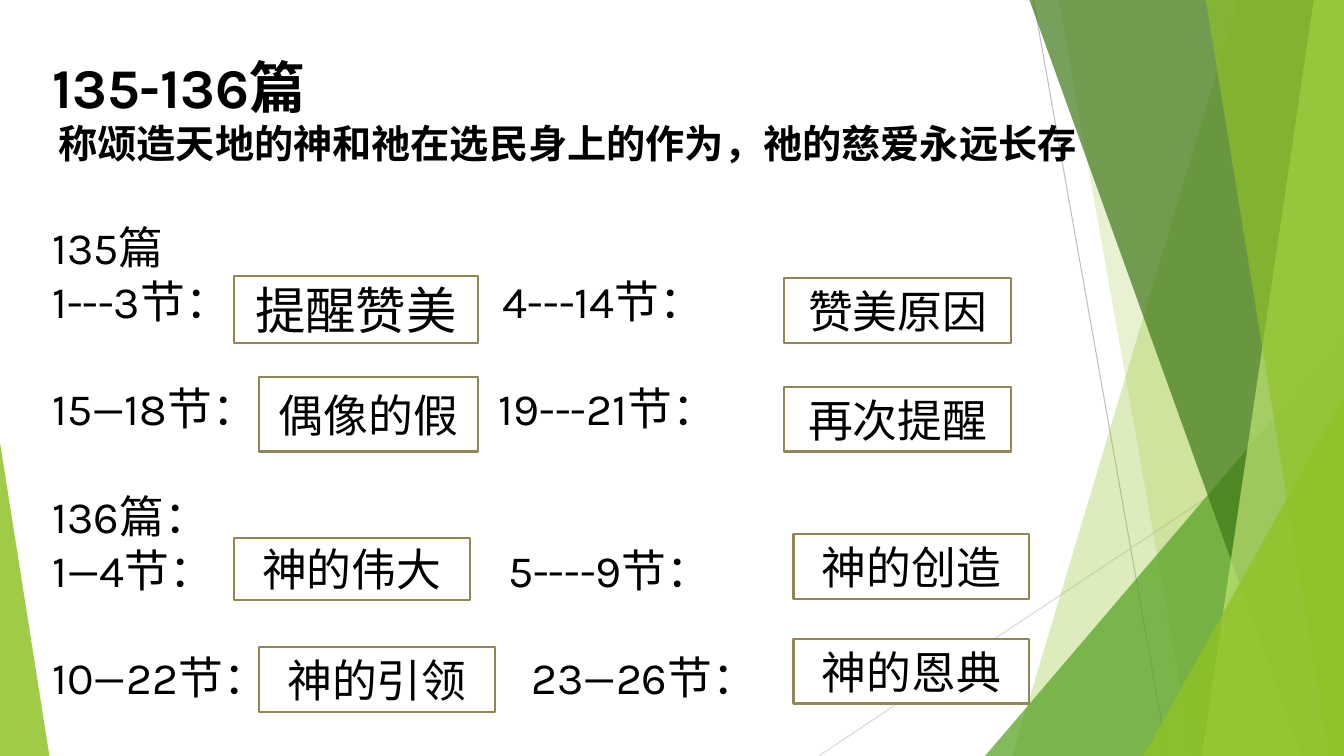
import pptx
import pptx.dml.color
import pptx.enum.lang
import pptx.enum.shapes
import pptx.enum.text
import pptx.oxml
import pptx.oxml.ns
import pptx.util
from pptx.util import Inches, Pt

# Content
FONT = "Karla"
HEADING = "135-136篇"
SUBHEADING = "称颂造天地的神和祂在选民身上的作为，祂的慈爱永远长存"
# text, tab stop of the second column (inches), one line of space before
VERSES = [
    ("135篇", None, False),
    ("1---3节：\t4---14节：", 4.47, False),
    ("15—18节：\t19---21节：", 4.43, True),
    ("136篇：", None, True),
    ("1—4节：\t5----9节：", 4.52, False),
    ("10—22节：\t23—26节：", 4.75, True),
]
# text, left, top, width, height, size
ANSWERS = [
    ("提醒赞美", 2.32, 2.74, 2.42, 0.66, 36),
    ("赞美原因", 7.78, 2.76, 2.25, 0.64, 32),
    ("再次提醒", 7.78, 3.84, 2.25, 0.64, 32),
    ("偶像的假", 2.57, 3.74, 2.17, 0.74, 32),
    ("神的伟大", 2.32, 5.34, 2.34, 0.61, 32),
    ("神的创造", 7.87, 5.3, 2.34, 0.64, 32),
    ("神的引领", 2.57, 6.42, 2.34, 0.64, 32),
    ("神的恩典", 7.87, 6.34, 2.34, 0.64, 32),
]

# Background decoration, from back to front
WIDTH, HEIGHT = 13.33, 7.5
THIN_LINES = [
    (10.25, 0, 11.58, HEIGHT, "BFBFBF"),
    (WIDTH, 4.03, 8.12, HEIGHT, "D9D9D9"),
]
# band: left edge at the top and at the bottom; triangle: left, width, height, apex
FACETS = [
    ("band", (12.28, 10.04), "90C226", 30),
    ("band", (10.5, 11.83), "90C226", 20),
    ("triangle", (9.77, 3.56, 4.17, 1), "54A021", 72),
    ("band", (10.21, 12.91), "3F7819", 70),
    ("band", (13.03, 11.92), "C0E474", 70),
    ("band", (11.96, 13.18), "90C226", 65),
    ("triangle", (11.34, 1.99, 3.57, 1), "90C226", 80),
    ("triangle", (0, 0.49, 3.11, 0), "90C226", 85),
]


def color(value):
    return pptx.dml.color.RGBColor.from_string(value)


def add_child(parent, tag, **attributes):
    child = pptx.oxml.parse_xml(f"<{tag} {pptx.oxml.ns.nsdecls('a')}/>")
    for name, value in attributes.items():
        child.set(name, str(value))
    parent.append(child)
    return child


def write(frame, text, size=32, bold=False, align="LEFT", before=0, indent=0, tab=None):
    """Fill the empty first paragraph, or add a new one."""
    paragraph = frame.paragraphs[0]
    if paragraph.runs:
        paragraph = frame.add_paragraph()
    paragraph.alignment = getattr(pptx.enum.text.PP_ALIGN, align)
    paragraph.line_spacing = 1.0
    paragraph.space_before = Pt(before)
    properties = paragraph._p.get_or_add_pPr()
    if indent:
        properties.set("marL", str(Inches(indent)))
        properties.set("indent", "0")
    if tab:
        stops = add_child(properties, "a:tabLst")
        add_child(stops, "a:tab", pos=Inches(tab), algn="l")
    run = paragraph.add_run()
    run.text = text
    run.font.size = Pt(size)
    run.font.bold = bold
    run.font.name = FONT
    run.font.color.rgb = color("000000")
    run.font.language_id = pptx.enum.lang.MSO_LANGUAGE_ID.SIMPLIFIED_CHINESE
    add_child(run._r.get_or_add_rPr(), "a:ea", typeface=FONT)


def set_frame(frame, anchor):
    frame.word_wrap = True
    frame.auto_size = pptx.enum.text.MSO_AUTO_SIZE.NONE
    frame.vertical_anchor = getattr(pptx.enum.text.MSO_ANCHOR, anchor)


def add_thin_line(shapes, x1, y1, x2, y2, line_color):
    line = shapes.add_connector(
        pptx.enum.shapes.MSO_CONNECTOR.STRAIGHT,
        Inches(x1), Inches(y1), Inches(x2), Inches(y2))
    line.line.color.rgb = color(line_color)
    line.line.width = Pt(0.75)
    add_child(line._element.spPr, "a:effectLst")


def add_facet(shapes, kind, geometry, fill, opacity):
    if kind == "band":
        top_x, bottom_x = geometry
        builder = shapes.build_freeform(Inches(top_x), 0)
        corners = [(WIDTH, 0), (WIDTH, HEIGHT), (bottom_x, HEIGHT)]
        builder.add_line_segments([(Inches(x), Inches(y)) for x, y in corners], close=True)
        shape = builder.convert_to_shape()
    else:
        left, width, height, apex = geometry
        shape = shapes.add_shape(
            pptx.enum.shapes.MSO_SHAPE.ISOSCELES_TRIANGLE,
            Inches(left), Inches(HEIGHT - height), Inches(width), Inches(height))
        shape.adjustments[0] = apex
    shape.shadow.inherit = False
    shape.fill.solid()
    shape.fill.fore_color.rgb = color(fill)
    shape.line.fill.background()
    solid = shape._element.spPr.find(pptx.oxml.ns.qn("a:solidFill"))
    add_child(solid[0], "a:alpha", val=opacity * 1000)


def add_answer(shapes, text, left, top, width, height, size):
    box = shapes.add_shape(
        pptx.enum.shapes.MSO_SHAPE.RECTANGLE,
        Inches(left), Inches(top), Inches(width), Inches(height))
    box.shadow.inherit = False
    box.fill.solid()
    box.fill.fore_color.rgb = color("FFFFFF")
    box.line.color.rgb = color("918655")
    box.line.width = Pt(1.5)
    set_frame(box.text_frame, "MIDDLE")
    write(box.text_frame, text, size=size, align="CENTER")


def main():
    presentation = pptx.Presentation()
    presentation.slide_width = Inches(WIDTH)
    presentation.slide_height = Inches(HEIGHT)
    slide = presentation.slides.add_slide(presentation.slide_layouts[5])
    shapes = slide.shapes

    # Decoration
    for thin_line in THIN_LINES:
        add_thin_line(shapes, *thin_line)
    for facet in FACETS:
        add_facet(shapes, *facet)

    # Title, moved in front of the decoration
    title = shapes.title
    shapes._spTree.append(title._element)
    title.left, title.top = Inches(0.42), Inches(0.47)
    title.width, title.height = Inches(12.81), Inches(1.3)
    set_frame(title.text_frame, "TOP")
    write(title.text_frame, HEADING, size=40, bold=True)
    write(title.text_frame, SUBHEADING, size=28, bold=True, indent=0.06)

    # Verse ranges
    verses = shapes.add_textbox(Inches(0.42), Inches(2.13), Inches(12.81), Inches(5))
    set_frame(verses.text_frame, "TOP")
    for text, tab, spaced in VERSES:
        write(verses.text_frame, text, tab=tab, before=38.5 if spaced else 0)

    # Answer boxes
    for answer in ANSWERS:
        add_answer(shapes, *answer)

    presentation.save("out.pptx")


if __name__ == "__main__":
    main()
